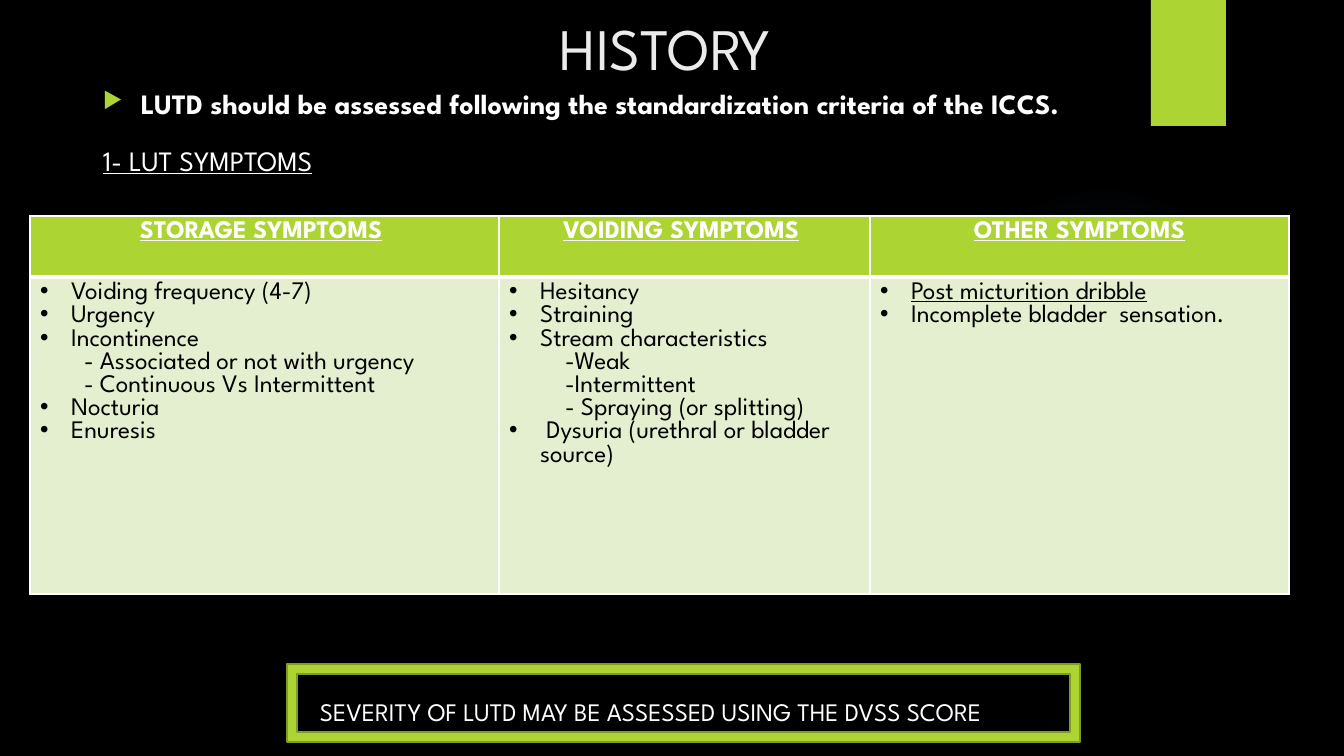
from lxml.etree import SubElement
from pptx import Presentation
from pptx.dml.color import RGBColor
from pptx.enum.shapes import MSO_SHAPE
from pptx.enum.text import MSO_ANCHOR, PP_ALIGN
from pptx.oxml import parse_xml
from pptx.oxml.ns import nsdecls, qn
from pptx.util import Emu, Pt

SCALE = 12192000 / 1344
FONT = "League Spartan"
COLORS = {
    "black": "000000",
    "white": "FFFFFF",
    "title": "EBEBEB",
    "lime": "ACD433",
    "olive": "7F9D26",
    "pale": "E3EFCE",
    "glow": "7AC4F0",
}


def px(length):
    return Emu(round(length * SCALE))


def write(frame, text, size=18, color="white", bold=False, underline=False, align=PP_ALIGN.LEFT,
          indent=0, bullet=None, bullet_color="black", bullet_size=100,
          before=0, spacing=1.0, tail=""):
    paragraph = frame.paragraphs[0]
    if paragraph.runs:
        paragraph = frame.add_paragraph()
    properties = paragraph._p.get_or_add_pPr()
    properties.set("marL", str(px(indent)))
    properties.set("indent", str(-px(indent) if bullet else 0))
    if bullet:
        tint = SubElement(properties, qn("a:buClr"))
        SubElement(tint, qn("a:srgbClr"), val=COLORS[bullet_color])
        SubElement(properties, qn("a:buSzPct"), val=str(bullet_size * 1000))
        SubElement(properties, qn("a:buChar"), char=bullet)
    paragraph.alignment = align
    paragraph.line_spacing = spacing
    paragraph.space_before = Pt(before)
    for part, underlined in ((text, underline), (tail, False)):
        if part:
            run = paragraph.add_run()
            run.text = part
            run.font.name = FONT
            run.font.size = Pt(size)
            run.font.bold = bold
            run.font.underline = underlined
            run.font.color.rgb = RGBColor.from_string(COLORS[color])


presentation = Presentation()
presentation.slide_width = px(1344)
presentation.slide_height = px(756)
slide = presentation.slides.add_slide(presentation.slide_layouts[6])
slide.background.fill.solid()
slide.background.fill.fore_color.rgb = RGBColor.from_string(COLORS["black"])

decorations = {}
for name, preset, box, color in (
    ("glow", MSO_SHAPE.OVAL, (949, 184, 310, 310), "glow"),
    ("ribbon", MSO_SHAPE.RECTANGLE, (1151, 0, 75, 126), "lime"),
):
    shape = slide.shapes.add_shape(preset, *map(px, box))
    shape.shadow.inherit = False
    shape.fill.solid()
    shape.fill.fore_color.rgb = RGBColor.from_string(COLORS[color])
    shape.line.fill.background()
    decorations[name] = shape

stops = "".join(
    f'<a:gs pos="{position * 1000}"><a:srgbClr val="{COLORS["glow"]}">'
    f'<a:alpha val="{alpha * 1000}"/></a:srgbClr></a:gs>'
    for position, alpha in ((0, 7), (36, 6), (69, 0), (100, 0))
)
gradient = parse_xml(
    f'<a:gradFill {nsdecls("a")}><a:gsLst>{stops}</a:gsLst><a:path path="circle">'
    '<a:fillToRect l="50000" t="50000" r="50000" b="50000"/></a:path></a:gradFill>'
)
solid_fill = decorations["glow"]._element.spPr.find(qn("a:solidFill"))
solid_fill.getparent().replace(solid_fill, gradient)

frames = {}
for name, box in (
    ("title", (93, 0, 1159, 93)),
    ("intro", (93, 71, 1159, 100)),
    ("severity", (310, 691, 750, 33)),
):
    frames[name] = slide.shapes.add_textbox(*map(px, box)).text_frame
    frames[name].word_wrap = True

frames["title"].vertical_anchor = MSO_ANCHOR.MIDDLE
write(frames["title"], "HISTORY", size=42, color="title", align=PP_ALIGN.CENTER, tail=" ")
write(frames["intro"], "LUTD should be assessed following the standardization criteria of the ICCS.",
      size=20, bold=True, indent=38, bullet="▶", bullet_color="lime", bullet_size=80, spacing=1.3)
write(frames["intro"], "1- LUT SYMPTOMS", size=20, underline=True, before=10, spacing=1.3)
write(frames["severity"], "SEVERITY OF LUTD MAY BE ASSESSED USING THE DVSS SCORE")

columns = [
    ("STORAGE SYMPTOMS", " ", 469, 44, [
        "Voiding frequency (4-7)", "Urgency", "Incontinence",
        "- Associated or not with urgency", "- Continuous Vs Intermittent",
        "Nocturia", "Enuresis",
    ]),
    ("VOIDING SYMPTOMS", " ", 371, 56, [
        "Hesitancy", "Straining", "Stream characteristics",
        "-Weak", "-Intermittent", "- Spraying (or splitting)",
        " Dysuria (urethral or bladder source)",
    ]),
    ("OTHER SYMPTOMS", "", 419, 0, [
        "Post micturition dribble", "Incomplete bladder  sensation.",
    ]),
]
table = slide.shapes.add_table(2, 3, px(30), px(216), px(1259), px(378)).table
table.rows[0].height = px(61)
table.rows[1].height = px(317)

for index, (heading, tail, width, sub_indent, symptoms) in enumerate(columns):
    table.columns[index].width = px(width)
    header, body = table.cell(0, index), table.cell(1, index)
    write(header.text_frame, heading, bold=True, underline=True, align=PP_ALIGN.CENTER, tail=tail)
    for symptom in symptoms:
        nested = symptom.startswith("-")
        write(body.text_frame, symptom, color="black",
              underline=symptom == "Post micturition dribble",
              indent=sub_indent if nested else 31, bullet=None if nested else "•")
    for cell, fill, edges in (
        (header, "lime", {"L": 1, "R": 1, "T": 1, "B": 3}),
        (body, "pale", {"L": 1, "R": 1, "T": 3, "B": 1}),
    ):
        properties = cell._tc.get_or_add_tcPr()
        for side, points in edges.items():
            border = SubElement(properties, qn(f"a:ln{side}"), w=str(Pt(points)))
            SubElement(SubElement(border, qn("a:solidFill")), qn("a:srgbClr"), val=COLORS["white"])
        cell.fill.solid()
        cell.fill.fore_color.rgb = RGBColor.from_string(COLORS[fill])

severity_frame = slide.shapes.add_shape(MSO_SHAPE.FRAME, px(287), px(664), px(793), px(78))
severity_frame.shadow.inherit = False
severity_frame.fill.solid()
severity_frame.fill.fore_color.rgb = RGBColor.from_string(COLORS["lime"])
severity_frame.line.color.rgb = RGBColor.from_string(COLORS["olive"])
severity_frame.line.width = Pt(1.5)

presentation.save("out.pptx")
